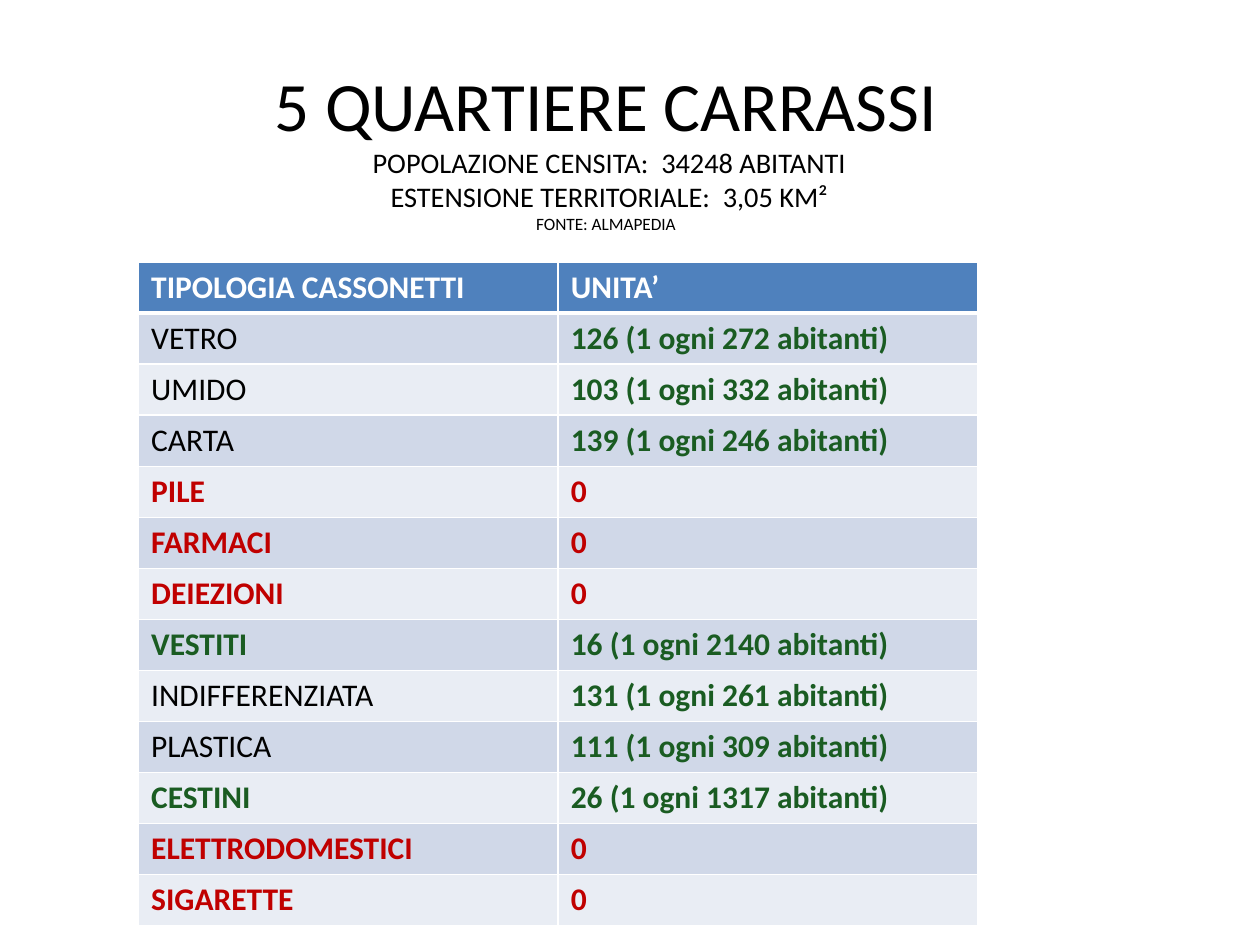
from lxml.etree import SubElement
from pptx import Presentation
from pptx.dml.color import RGBColor as Color
from pptx.enum.text import MSO_ANCHOR as Anchor, PP_ALIGN as Align
from pptx.oxml.ns import qn
from pptx.util import Pt

EMU_PER_PX = 9144
BLACK = Color(0x00, 0x00, 0x00)
WHITE = Color(0xFF, 0xFF, 0xFF)
BLUE = Color(0x4F, 0x81, 0xBD)
DARK_BAND = Color(0xD0, 0xD8, 0xE8)
LIGHT_BAND = Color(0xE9, 0xED, 0xF4)
GREEN = Color(0x1A, 0x5C, 0x22)
RED = Color(0xC0, 0x00, 0x00)

TITLE_LINES = [
    ("5 QUARTIERE CARRASSI", 39.6),
    (" POPOLAZIONE CENSITA:  34248 ABITANTI", 16.2),
    (" ESTENSIONE TERRITORIALE:  3,05 KM²", 16.2),
    ("FONTE: ALMAPEDIA", 9.9),
]
HEADER = ("TIPOLOGIA CASSONETTI", "UNITA’")
BINS = [
    ("VETRO", "126 (1 ogni 272 abitanti)", BLACK),
    ("UMIDO", "103 (1 ogni 332 abitanti)", BLACK),
    ("CARTA", "139 (1 ogni 246 abitanti)", BLACK),
    ("PILE", "0", RED),
    ("FARMACI", "0", RED),
    ("DEIEZIONI", "0", RED),
    ("VESTITI", "16 (1 ogni 2140 abitanti)", GREEN),
    ("INDIFFERENZIATA", "131 (1 ogni 261 abitanti)", BLACK),
    ("PLASTICA", "111 (1 ogni 309 abitanti)", BLACK),
    ("CESTINI", "26 (1 ogni 1317 abitanti)", GREEN),
    ("ELETTRODOMESTICI", "0", RED),
    ("SIGARETTE", "0", RED),
]


def px(*lengths):
    return [length * EMU_PER_PX for length in lengths]


class SlideBuilder:
    """Holds the text style and the current slide, and adds elements to it."""

    def __init__(self, slide, font="Calibri"):
        self.slide = slide
        self.font = font

    def span(self, para, text, size, color, bold=False):
        span = para.add_run()
        span.text = text
        span.font.color.rgb = color
        style = {"name": self.font, "size": Pt(size), "bold": bold}
        for name, value in style.items():
            setattr(span.font, name, value)

    def title(self, bounds, lines):
        frame = self.slide.shapes.add_textbox(*px(*bounds)).text_frame
        for name, value in {"word_wrap": True, "vertical_anchor": Anchor.MIDDLE}.items():
            setattr(frame, name, value)
        para = frame.paragraphs[0]
        para.alignment = Align.CENTER
        for index, (text, size) in enumerate(lines):
            if index:
                para.add_line_break()
            self.span(para, text, size, BLACK)

    def border(self, cell, widths):
        properties = cell._tc.get_or_add_tcPr()
        for side, width in widths.items():
            line = SubElement(properties, qn(f"a:ln{side}"), w=str(Pt(width)))
            fill = SubElement(line, qn("a:solidFill"))
            SubElement(fill, qn("a:srgbClr"), val=str(WHITE))

    def cell(self, cell, text, color, bold, fill, widths):
        self.border(cell, widths)
        cell.fill.solid()
        cell.fill.fore_color.rgb = fill
        self.span(cell.text_frame.paragraphs[0], text, 18, color, bold)

    def table(self, bounds, header, bins):
        shape = self.slide.shapes.add_table(len(bins) + 1, len(header), *px(*bounds))
        table = shape.table
        thin = {"L": 1, "R": 1, "T": 1, "B": 1}
        for column, text in enumerate(header):
            self.cell(table.cell(0, column), text, WHITE, True, BLUE, thin | {"B": 3})
        for row, (kind, units, color) in enumerate(bins, 1):
            band = DARK_BAND if row % 2 else LIGHT_BAND
            widths = thin | {"T": 3 if row == 1 else 1}
            units_color = RED if color == RED else GREEN
            self.cell(table.cell(row, 0), kind, color, color != BLACK, band, widths)
            self.cell(table.cell(row, 1), units, units_color, True, band, widths)


def main():
    deck = Presentation()
    deck.slide_width, deck.slide_height = px(1000, 750)
    page = SlideBuilder(deck.slides.add_slide(deck.slide_layouts[6]))
    page.title((31, 55, 900, 125), TITLE_LINES)
    page.table((110, 208, 666, 527), HEADER, BINS)
    deck.save("out.pptx")


if __name__ == "__main__":
    main()
